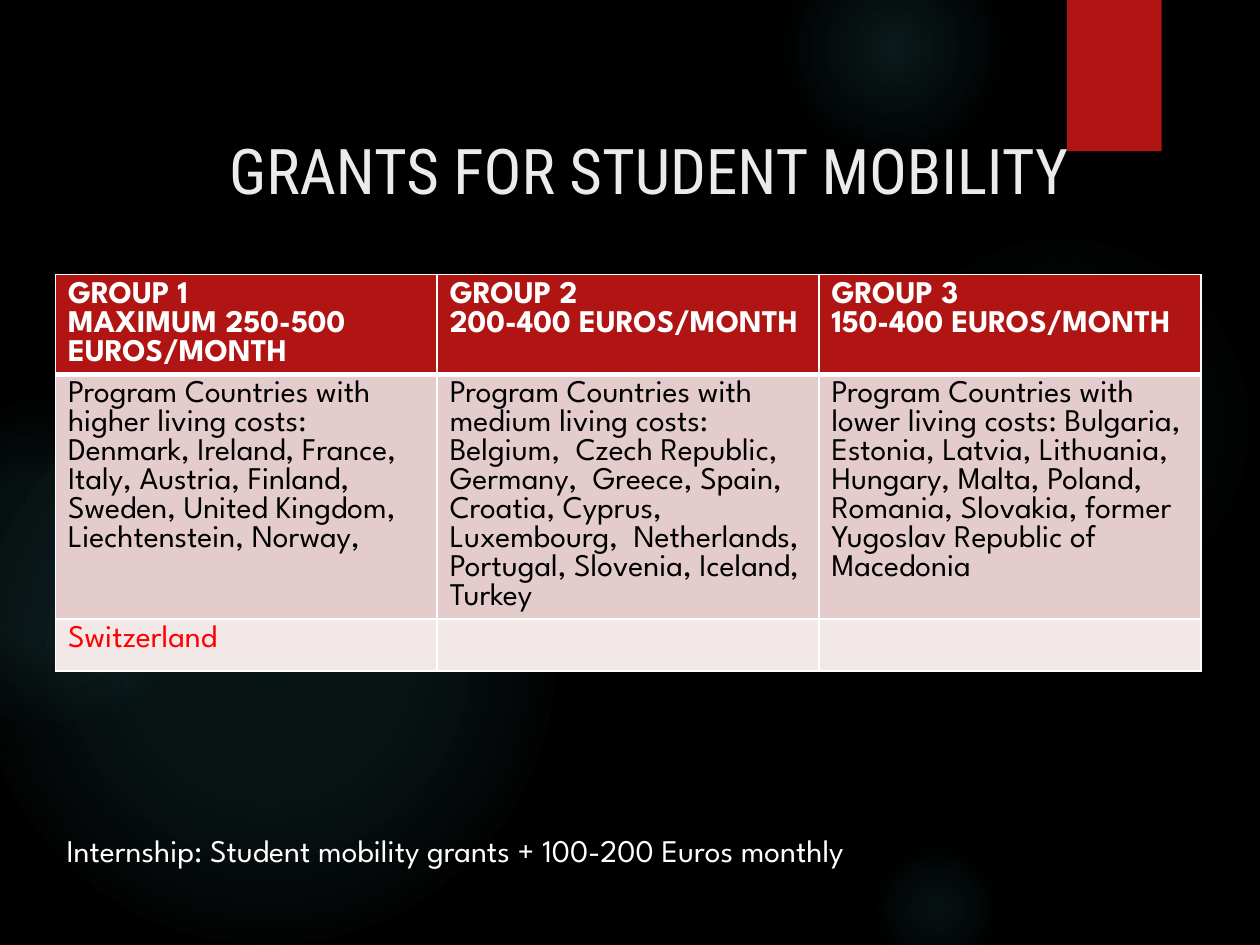
"""Build the slide on grants for student mobility."""
from lxml import etree
from pptx import Presentation
from pptx.dml.color import RGBColor
from pptx.enum.shapes import MSO_SHAPE
from pptx.enum.text import MSO_ANCHOR, MSO_AUTO_SIZE, PP_ALIGN
from pptx.oxml.ns import nsdecls
from pptx.util import Inches, Pt

OVAL, RECTANGLE = MSO_SHAPE.OVAL, MSO_SHAPE.RECTANGLE
TOP, MIDDLE = MSO_ANCHOR.TOP, MSO_ANCHOR.MIDDLE
CENTER, JUSTIFY, LEFT = PP_ALIGN.CENTER, PP_ALIGN.JUSTIFY, PP_ALIGN.LEFT
NO_FIT = MSO_AUTO_SIZE.NONE

TITLE = "GRANTS FOR STUDENT MOBILITY"
GROUPS = [
    ("GROUP 1\nMAXIMUM 250-500 EUROS/MONTH",
     "Program Countries with higher living costs: Denmark, Ireland, France, Italy, Austria, "
     "Finland, Sweden, United Kingdom, Liechtenstein, Norway,",
     "Switzerland"),
    ("GROUP 2\n200-400 EUROS/MONTH",
     "Program Countries with medium living costs: Belgium,  Czech Republic,  Germany,  Greece, "
     "Spain, Croatia, Cyprus, Luxembourg,  Netherlands, Portugal, Slovenia, Iceland, Turkey",
     ""),
    ("GROUP 3\n150-400 EUROS/MONTH",
     "Program Countries with lower living costs: Bulgaria, Estonia, Latvia, Lithuania, Hungary, "
     "Malta, Poland, Romania, Slovakia, former Yugoslav Republic of Macedonia",
     ""),
]
INTERNSHIP = "Internship: Student mobility grants + 100-200 Euros monthly"

THEME = {
    "background": "000000", "glow": "50B9C1", "accent": "B01513", "border": "FFFFFF",
    "title": {"name": "Roboto Condensed", "size": Pt(36), "bold": False, "color": "EBEBEB"},
    "note": {"name": "League Spartan", "size": Pt(18), "bold": False, "color": "FFFFFF"},
}
ROWS = [
    {"height": 0.79, "fill": THEME["accent"], "font": {**THEME["note"], "bold": True}},
    {"height": 1.94, "fill": "E4CCCC", "font": {**THEME["note"], "color": "000000"}},
    {"height": 0.41, "fill": "F2E8E7", "font": {**THEME["note"], "color": "FF0000"}},
]
GLOWS = [
    (6.89, 1.83, 3.08, [(0, 7), (36, 6), (69, 0)]),
    (6.22, -0.5, 1.75, [(0, 14), (36, 7), (73, 0)]),
    (6.89, 6.67, 1.08, [(0, 9), (36, 5), (66, 0)]),
    (-0.17, 2.92, 4.58, [(0, 11), (36, 10), (75, 0)]),
    (-0.92, 3.17, 2.58, [(0, 8), (36, 8), (72, 0)]),
]
TABLE_LEFT, TABLE_TOP, COLUMN_WIDTH = 0.44, 2.18, 3.03


def paint(fill, color):
    fill.solid()
    fill.fore_color.rgb = RGBColor.from_string(color)


def write(frame, text, font, align):
    frame.text = text
    for paragraph in frame.paragraphs:
        paragraph.alignment = align
        for target in (paragraph, *paragraph.runs):
            for key, value in font.items():
                if key == "color":
                    target.font.color.rgb = RGBColor.from_string(value)
                else:
                    setattr(target.font, key, value)


def add_plain(slide, kind, left, top, width, height):
    shape = slide.shapes.add_shape(kind, *map(Inches, (left, top, width, height)))
    shape.shadow.inherit = False
    shape.line.fill.background()
    return shape


def add_glow(slide, left, top, size, stops):
    glow = add_plain(slide, OVAL, left, top, size, size)
    glow.fill.gradient()
    gradient = glow.fill._xPr.find("{*}gradFill")
    stop_xml = "".join(
        f'<a:gs pos="{position * 1000}"><a:srgbClr val="{THEME["glow"]}">'
        f'<a:alpha val="{opacity * 1000}"/></a:srgbClr></a:gs>'
        for position, opacity in stops)
    radial = etree.fromstring(
        f'<a:gradFill {nsdecls("a")} rotWithShape="1"><a:gsLst>{stop_xml}</a:gsLst>'
        '<a:path path="circle"><a:fillToRect l="50000" t="50000" r="50000" b="50000"/>'
        '</a:path></a:gradFill>')
    gradient.getparent().replace(gradient, radial)


def add_borders(cell, widths):
    for index, (side, points) in enumerate(widths.items()):
        border = etree.fromstring(
            f'<a:ln{side} {nsdecls("a")} w="{Pt(points)}"><a:solidFill>'
            f'<a:srgbClr val="{THEME["border"]}"/></a:solidFill></a:ln{side}>')
        cell._tc.get_or_add_tcPr().insert(index, border)


def add_groups(slide):
    table = slide.shapes.add_table(
        len(ROWS), len(GROUPS), Inches(TABLE_LEFT), Inches(TABLE_TOP),
        Inches(COLUMN_WIDTH * len(GROUPS)), Inches(sum(row["height"] for row in ROWS))).table
    for column, group in enumerate(GROUPS):
        table.columns[column].width = Inches(COLUMN_WIDTH)
        for index, (row, text) in enumerate(zip(ROWS, group)):
            table.rows[index].height = Inches(row["height"])
            cell = table.cell(index, column)
            write(cell.text_frame, text, row["font"], LEFT)
            paint(cell.fill, row["fill"])
            add_borders(cell, {"L": 1, "R": 1, "T": 3 if index == 1 else 1,
                               "B": 3 if index == 0 else 1})


def main():
    deck = Presentation()
    deck.slide_width, deck.slide_height = Inches(10), Inches(7.5)
    slide = deck.slides.add_slide(deck.slide_layouts[5])
    paint(slide.background.fill, THEME["background"])

    for glow in GLOWS:
        add_glow(slide, *glow)
    paint(add_plain(slide, RECTANGLE, 8.47, 0, 0.75, 1.2).fill, THEME["accent"])

    title = slide.shapes.title
    title.left, title.top, title.width, title.height = map(Inches, (1.29, 0.5, 7.72, 1.53))
    write(title.text_frame, TITLE, THEME["title"], CENTER)
    slide.shapes._spTree.append(title._element)

    add_groups(slide)

    note = slide.shapes.add_textbox(*map(Inches, (0.43, 6.55, 9.43, 0.4)))
    write(note.text_frame, INTERNSHIP, THEME["note"], JUSTIFY)

    frame_formats = [
        (title.text_frame, {"vertical_anchor": MIDDLE, "margin_top": Inches(0.2)}),
        (note.text_frame, {"vertical_anchor": TOP}),
    ]
    for frame, formats in frame_formats:
        for key, value in {"word_wrap": True, "auto_size": NO_FIT, **formats}.items():
            setattr(frame, key, value)

    deck.save("out.pptx")


if __name__ == "__main__":
    main()
